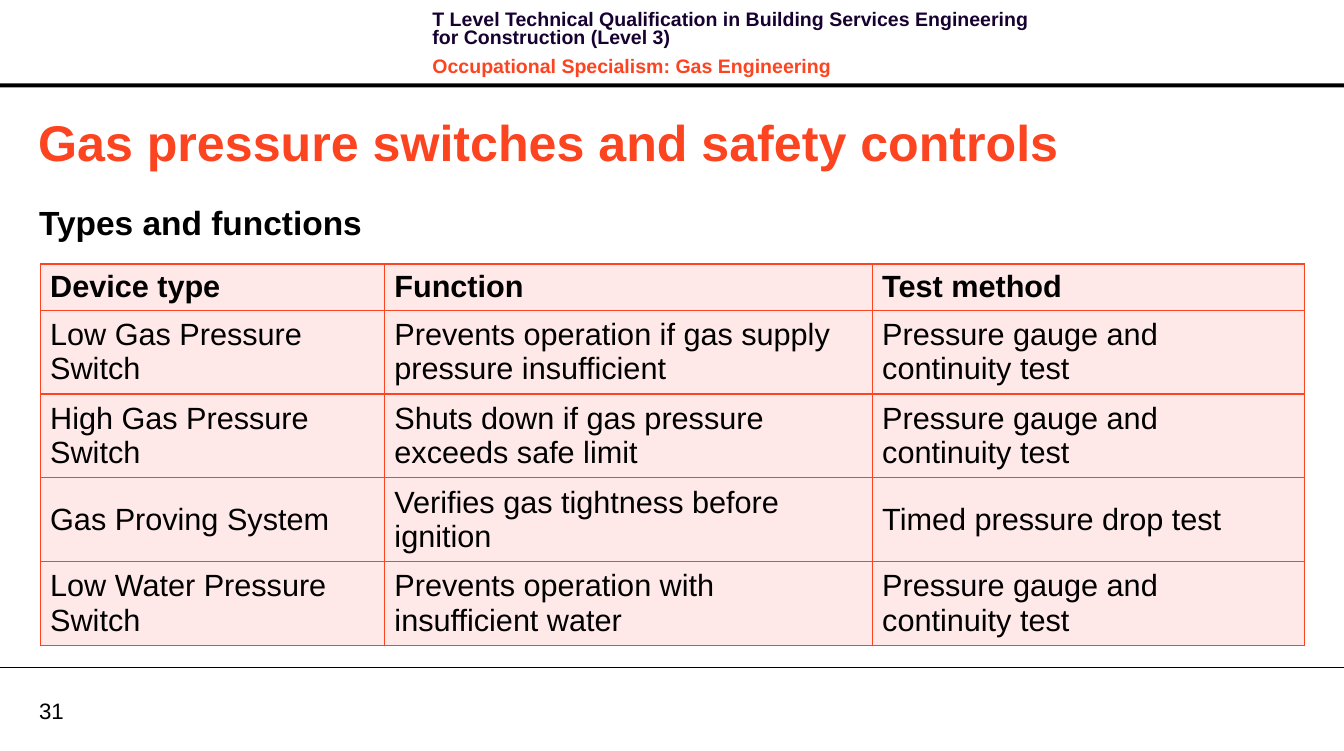
from dataclasses import dataclass

import pptx
import pptx.dml.color
import pptx.enum.shapes
import pptx.enum.text
import pptx.oxml
import pptx.oxml.ns
import pptx.util
from pptx.util import Inches, Pt

ANCHOR = pptx.enum.text.MSO_ANCHOR


@dataclass(frozen=True)
class Theme:
    font: str = "Arial"
    black: str = "000000"
    navy: str = "170130"
    accent: str = "FC4421"
    cell: str = "FEE9E8"
    title_size: int = 36
    subtitle_size: int = 24
    table_size: int = 22
    number_size: int = 16
    header_size: int = 14


THEME = Theme()
SLIDE_WIDTH, SLIDE_HEIGHT = 13.39, 7.48

DEVICES = [
    ["Device type", "Function", "Test method"],
    ["Low Gas Pressure Switch", "Prevents operation if gas supply pressure insufficient",
     "Pressure gauge and continuity test"],
    ["High Gas Pressure Switch", "Shuts down if gas pressure exceeds safe limit",
     "Pressure gauge and continuity test"],
    ["Gas Proving System", "Verifies gas tightness before ignition",
     "Timed pressure drop test"],
    ["Low Water Pressure Switch", "Prevents operation with insufficient water",
     "Pressure gauge and continuity test"],
]


def rgb(color):
    return pptx.dml.color.RGBColor.from_string(color)


def add_run(paragraph, text, size, color=THEME.black, bold=False):
    paragraph.alignment = pptx.enum.text.PP_ALIGN.LEFT
    run = paragraph.add_run()
    run.text = text
    run.font.name = THEME.font
    run.font.size = Pt(size)
    run.font.bold = bold
    run.font.color.rgb = rgb(color)


def place(shape, box):
    shape.left, shape.top, shape.width, shape.height = map(Inches, box)


def prepare_frame(shape, anchor, inset=(0, 0)):
    """Set wrapping, anchor and the (horizontal, vertical) insets."""
    frame = shape.text_frame
    frame.word_wrap = True
    frame.auto_size = pptx.enum.text.MSO_AUTO_SIZE.NONE
    frame.vertical_anchor = anchor
    frame.margin_left = frame.margin_right = Inches(inset[0])
    frame.margin_top = frame.margin_bottom = Inches(inset[1])
    return frame


def add_header(slide, box):
    """Place the course lines, with the heavy rule at the foot of the box."""
    left, top, width, height = box
    bar_height = 0.04
    bar = slide.shapes.add_shape(
        pptx.enum.shapes.MSO_SHAPE.RECTANGLE,
        *map(Inches, (left, top + height - bar_height, width, bar_height)))
    bar.shadow.inherit = False
    bar.fill.solid()
    bar.fill.fore_color.rgb = rgb(THEME.black)
    bar.line.fill.background()

    course = slide.shapes.add_textbox(*map(Inches, (left + 4.21, top + 0.07, 6.37, 0.64)))
    frame = prepare_frame(course, ANCHOR.TOP, (0.1, 0.05))
    lines = [
        ("T Level Technical Qualification in Building Services Engineering "
         "for Construction (Level 3)", THEME.navy),
        ("Occupational Specialism: Gas Engineering", THEME.accent),
    ]
    for index, (text, color) in enumerate(lines):
        paragraph = frame.add_paragraph() if index else frame.paragraphs[0]
        paragraph.line_spacing = Pt(13.1)
        paragraph.space_before = Pt(4 if index else 0)
        paragraph.space_after = Pt(4)
        add_run(paragraph, text, THEME.header_size, color, bold=True)


def add_footer(slide, box, number):
    """Place the thin rule at the top of the box and the page number below."""
    left, top, width, _ = box
    rule = slide.shapes.add_connector(
        pptx.enum.shapes.MSO_CONNECTOR.STRAIGHT,
        *map(Inches, (left, top, left + width, top)))
    rule.line.color.rgb = rgb(THEME.black)
    rule.line.width = Pt(0.75)
    rule._element.spPr.append(pptx.oxml.parse_xml(
        f"<a:effectLst {pptx.oxml.ns.nsdecls('a')}/>"))

    page = slide.shapes.add_textbox(*map(Inches, (left + 0.39, top + 0.29, 0.64, 0.27)))
    frame = prepare_frame(page, ANCHOR.MIDDLE)
    add_run(frame.paragraphs[0], number, THEME.number_size)


def fill_headings(slide, box):
    left, top, width, height = box
    title = slide.shapes.title
    place(title, (left, top, width, 0.71))
    frame = prepare_frame(title, ANCHOR.MIDDLE, (0.1, 0.05))
    add_run(frame.paragraphs[0], "Gas pressure switches and safety controls",
            THEME.title_size, THEME.accent, bold=True)

    subtitle = slide.placeholders[1]
    place(subtitle, (left + 0.11, top + height - 0.41, width, 0.41))
    paragraph = prepare_frame(subtitle, ANCHOR.TOP).paragraphs[0]
    properties = paragraph._p.get_or_add_pPr()
    properties.set("marL", "0")
    properties.set("indent", "0")
    properties.append(pptx.oxml.parse_xml(f"<a:buNone {pptx.oxml.ns.nsdecls('a')}/>"))
    paragraph.line_spacing = 1.1
    paragraph.space_before = Pt(0)
    paragraph.space_after = Pt(12)
    add_run(paragraph, "Types and functions", THEME.subtitle_size, bold=True)


def style_cell(cell):
    cell.vertical_anchor = ANCHOR.MIDDLE
    properties = cell._tc.get_or_add_tcPr()
    for side in ("lnL", "lnR", "lnT", "lnB"):
        properties.append(pptx.oxml.parse_xml(
            f'<a:{side} {pptx.oxml.ns.nsdecls("a")} w="{Pt(1)}"><a:solidFill>'
            f'<a:srgbClr val="{THEME.accent}"/></a:solidFill></a:{side}>'))
    cell.fill.solid()
    cell.fill.fore_color.rgb = rgb(THEME.cell)


def add_device_table(slide, box):
    left, top, width, height = box
    header_height = 0.46
    row_height = (height - header_height) / (len(DEVICES) - 1)
    table = slide.shapes.add_table(
        len(DEVICES), len(DEVICES[0]), *map(Inches, box)).table
    table.horz_banding = False
    for column, column_width in zip(table.columns, (3.43, 4.86, width - 8.29)):
        column.width = Inches(column_width)
    for row_index, texts in enumerate(DEVICES):
        is_header = row_index == 0
        table.rows[row_index].height = Inches(header_height if is_header else row_height)
        for column_index, text in enumerate(texts):
            cell = table.cell(row_index, column_index)
            style_cell(cell)
            add_run(cell.text_frame.paragraphs[0], text, THEME.table_size, bold=is_header)


def main():
    presentation = pptx.Presentation()
    presentation.slide_width = Inches(SLIDE_WIDTH)
    presentation.slide_height = Inches(SLIDE_HEIGHT)
    slide = presentation.slides.add_slide(presentation.slide_layouts[1])
    add_header(slide, (0, 0, SLIDE_WIDTH, 0.87))
    add_footer(slide, (0, 6.65, SLIDE_WIDTH, 0.83), "31")
    fill_headings(slide, (0.28, 1.05, 12.72, 1.33))
    add_device_table(slide, (0.4, 2.63, 12.6, 3.8))
    presentation.save("out.pptx")


if __name__ == "__main__":
    main()
